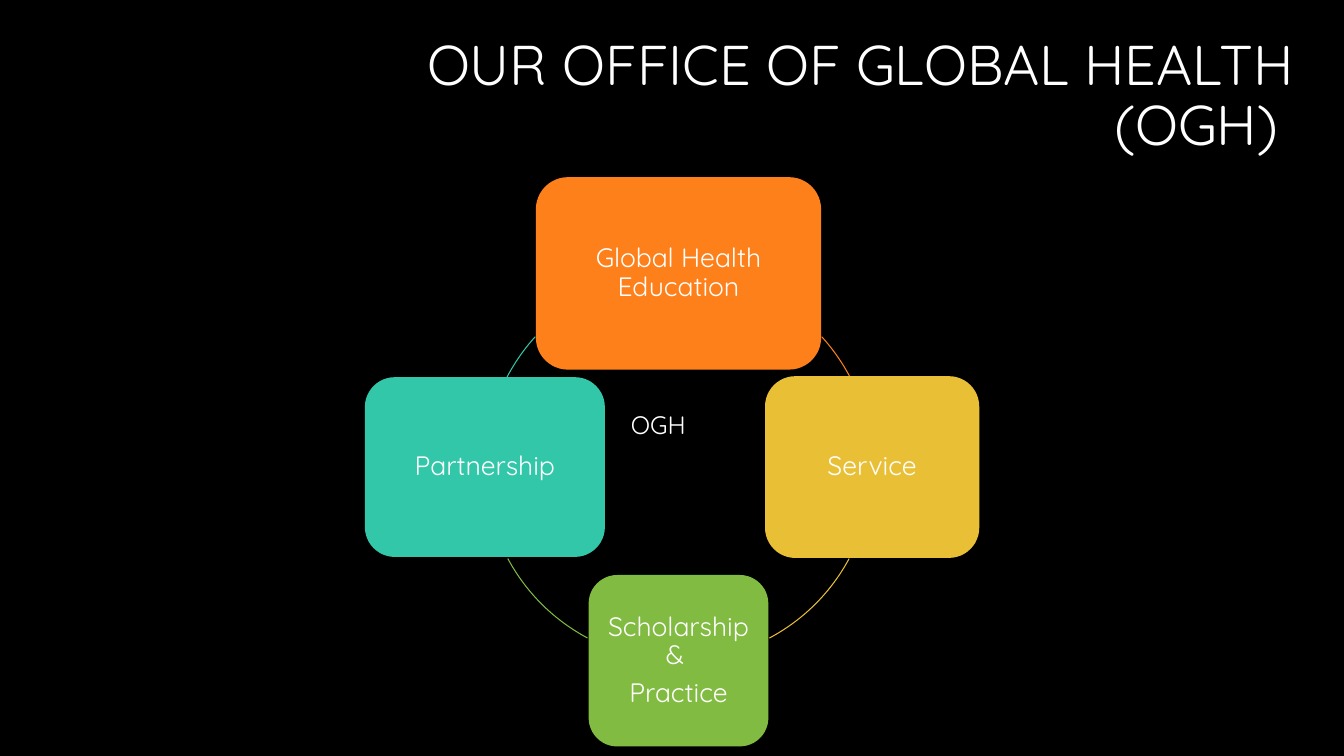
from math import cos, radians, sin

from pptx import Presentation
from pptx.dml.color import RGBColor
from pptx.enum.shapes import MSO_SHAPE
from pptx.enum.text import MSO_ANCHOR, MSO_AUTO_SIZE, PP_ALIGN
from pptx.util import Cm, Pt

ROUNDED = MSO_SHAPE.ROUNDED_RECTANGLE
ARC = MSO_SHAPE.ARC
MIDDLE = MSO_ANCHOR.MIDDLE
CENTER, RIGHT, LEFT = PP_ALIGN.CENTER, PP_ALIGN.RIGHT, PP_ALIGN.LEFT

FONT = "Quicksand"
WHITE, BLACK = "FFFFFF", "000000"
TITLE = "OUR OFFICE OF GLOBAL HEALTH (OGH) "
HUB = "OGH"
RING_X, RING_Y, RING_RADIUS = 17.1, 11.77, 4.88
TITLE_ONLY = 5

# text, fill, width and height in cm, start and end angle of the following arc
PILLARS = [
    ("Global Health Education", "FE801A", 7.19, 4.85, 317.7, 332),
    ("Service", "E9BF35", 5.4, 4.58, 28.2, 62),
    ("Scholarship & \nPractice", "81BB42", 4.53, 4.32, 118, 151.8),
    ("Partnership", "32C7A9", 6.05, 4.53, 207.7, 222.3),
]


def color(value):
    return RGBColor.from_string(value)


def write(frame, text, size, align, spacing=1.0, after=0):
    frame.text = text
    frame.word_wrap = True
    for para in frame.paragraphs:
        para.alignment = align
        para.line_spacing = spacing
        para.space_after = Pt(after)
        for span in para.runs:
            span.font.name = FONT
            span.font.size = Pt(size)
            span.font.color.rgb = color(WHITE)


def add_pillar(page, index, text, fill, width, height):
    angle = radians(90 * index - 90)
    middle_x = RING_X + RING_RADIUS * cos(angle)
    middle_y = RING_Y + RING_RADIUS * sin(angle)
    box = page.shapes.add_shape(ROUNDED, Cm(middle_x - width / 2), Cm(middle_y - height / 2),
                                Cm(width), Cm(height))
    box.shadow.inherit = False
    box.fill.solid()
    box.fill.fore_color.rgb = color(fill)
    box.line.fill.background()
    frame = box.text_frame
    frame.margin_left = frame.margin_right = Cm(0.2)
    frame.margin_top = frame.margin_bottom = Cm(0.2)
    frame.vertical_anchor = MIDDLE
    write(frame, text, 19, CENTER, 0.9, 6.5)


def add_arc(page, stroke, start, end):
    arc = page.shapes.add_shape(ARC, Cm(RING_X - RING_RADIUS), Cm(RING_Y - RING_RADIUS),
                                Cm(2 * RING_RADIUS), Cm(2 * RING_RADIUS))
    arc.shadow.inherit = False
    arc.adjustments[0] = start * 0.6
    arc.adjustments[1] = end * 0.6
    arc.fill.background()
    arc.line.color.rgb = color(stroke)
    arc.line.width = Pt(0.75)


def main():
    deck = Presentation()
    deck.slide_width, deck.slide_height = Cm(33.87), Cm(19.05)
    page = deck.slides.add_slide(deck.slide_layouts[TITLE_ONLY])
    page.background.fill.solid()
    page.background.fill.fore_color.rgb = color(BLACK)

    title = page.shapes.title
    title.left, title.top, title.width, title.height = Cm(8.92), Cm(0.66), Cm(23.93), Cm(3.58)
    title.text_frame.vertical_anchor = MIDDLE
    title.text_frame.auto_size = MSO_AUTO_SIZE.NONE
    write(title.text_frame, TITLE, 40, RIGHT, 0.9)

    for index, (text, fill, width, height, start, end) in enumerate(PILLARS):
        add_pillar(page, index, text, fill, width, height)
        add_arc(page, fill, start, end)

    hub = page.shapes.add_textbox(Cm(15.65), Cm(10.19), Cm(2.87), Cm(1.02))
    write(hub.text_frame, HUB, 18, LEFT)
    deck.save("out.pptx")


if __name__ == "__main__":
    main()
